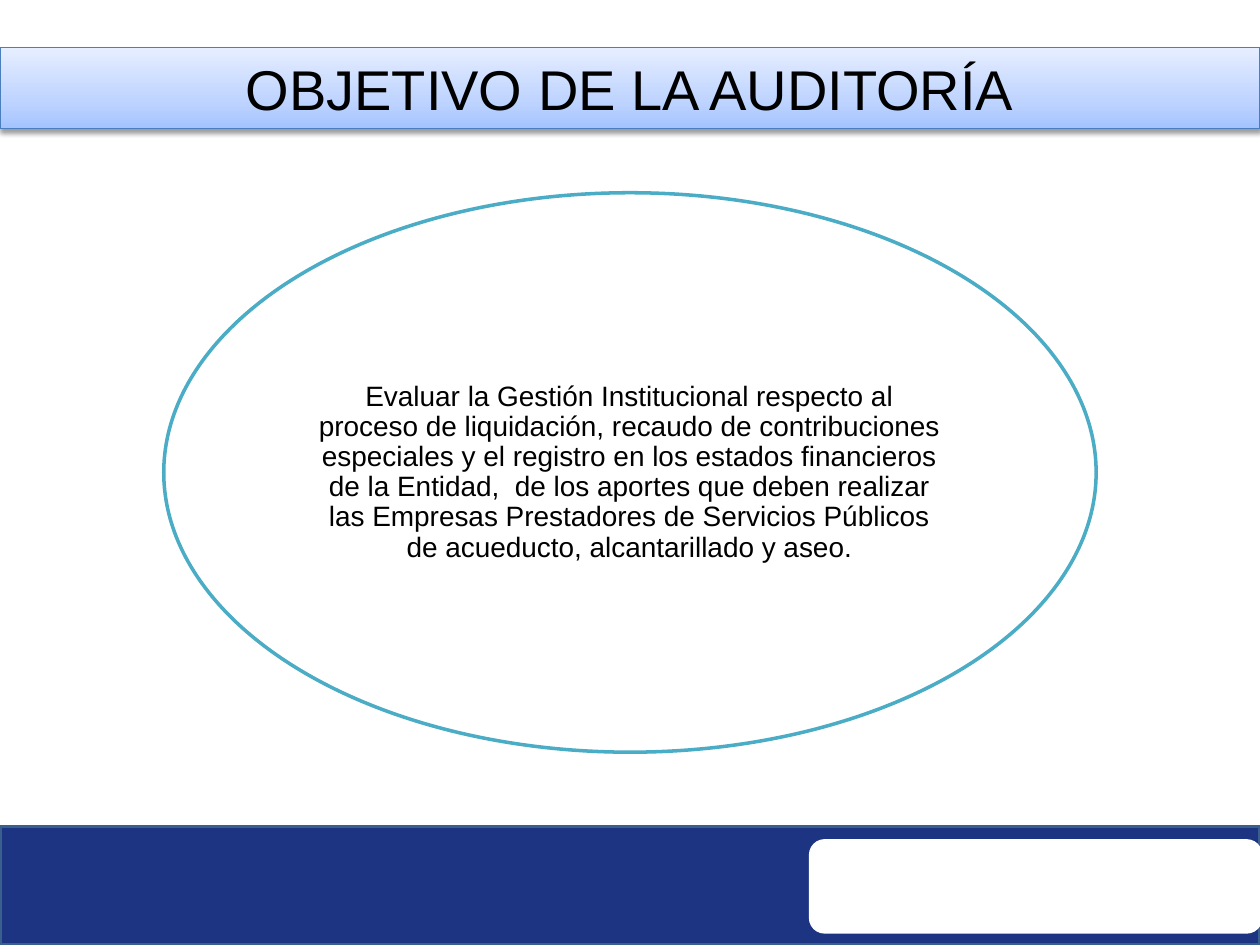
"""Build the audit objective slide."""
from copy import deepcopy
from dataclasses import dataclass
from typing import Optional

from lxml import etree
from pptx import Presentation
from pptx.dml.color import RGBColor
from pptx.enum.shapes import MSO_SHAPE as Preset
from pptx.enum.text import MSO_ANCHOR as Anchor, PP_ALIGN as Align
from pptx.oxml.ns import qn
from pptx.util import Inches, Pt

TITLE = "OBJETIVO DE LA AUDITORÍA"
OBJECTIVE = (
    "Evaluar la Gestión Institucional respecto al proceso de liquidación, "
    "recaudo de contribuciones especiales y el registro en los estados "
    "financieros de la Entidad,  de los aportes que deben realizar las Empresas "
    "Prestadores de Servicios Públicos de acueducto, alcantarillado y aseo."
)
BANNER_STOPS = ((0, "A4C4FF"), (0.35, "BFD4FF"), (1, "E6EEFF"))


@dataclass
class Panel:
    preset: Preset
    at: tuple
    fill: str
    line: Optional[str] = None
    width: float = 0


FOOTER = Panel(Preset.RECTANGLE, (0, 6.56, 10, 0.94), "1C3481", "3A5F8C", 2)
FOOTER_PLATE = Panel(Preset.ROUNDED_RECTANGLE, (6.42, 6.66, 3.6, 0.75), "FFFFFF")
BANNER = Panel(Preset.RECTANGLE, (0, 0.38, 10, 0.64), "BFD4FF", "4B7EBC", 0.75)
OVAL = Panel(Preset.OVAL, (1.3, 1.53, 7.4, 4.44), "FFFFFF", "4BACC6", 2)


def colour(value: str) -> RGBColor:
    return RGBColor.from_string(value)


def draw_panel(page, panel: Panel):
    shape = page.shapes.add_shape(panel.preset, *map(Inches, panel.at))
    shape.shadow.inherit = False
    shape.fill.solid()
    shape.fill.fore_color.rgb = colour(panel.fill)
    if panel.line:
        shape.line.color.rgb = colour(panel.line)
        shape.line.width = Pt(panel.width)
    else:
        shape.line.fill.background()
    return shape


def add_gradient(shape, stops: tuple, angle: float) -> None:
    shape.fill.gradient()
    shape.fill.gradient_angle = angle
    stop_list = next(shape.element.spPr.iter(qn("a:gsLst")))
    while len(stop_list) < len(stops):
        stop_list.append(deepcopy(stop_list[0]))
    for stop, (position, value) in zip(shape.fill.gradient_stops, stops):
        stop.position = position
        stop.color.rgb = colour(value)


def add_shadow(shape, value: str, opacity: int, blur: float, distance: float) -> None:
    effects = shape.element.spPr.find(qn("a:effectLst"))
    shadow = etree.SubElement(
        effects, qn("a:outerShdw"), blurRad=str(Pt(blur)), dist=str(Pt(distance)),
        dir="5400000", rotWithShape="0",
    )
    tint = etree.SubElement(shadow, qn("a:srgbClr"), val=value)
    etree.SubElement(tint, qn("a:alpha"), val=str(opacity * 1000))


def write_text(box, text: str, size: float, spacing: float, frame_format: dict) -> None:
    frame = box.text_frame
    for name, value in frame_format.items():
        setattr(frame, name, value)
    para = frame.paragraphs[0]
    para.alignment = Align.CENTER
    para.line_spacing = spacing
    span = para.add_run()
    span.text = text
    for name, value in {"name": "Arial", "size": Pt(size)}.items():
        setattr(span.font, name, value)
    span.font.color.rgb = colour("000000")


def main() -> None:
    deck = Presentation()
    deck.slide_width, deck.slide_height = Inches(10), Inches(7.5)
    page = deck.slides.add_slide(deck.slide_layouts[6])

    draw_panel(page, FOOTER)
    draw_panel(page, FOOTER_PLATE)

    banner = draw_panel(page, BANNER)
    add_gradient(banner, BANNER_STOPS, 90)
    add_shadow(banner, "000000", 38, 3.1, 1.6)
    write_text(banner, TITLE, 32, 1.0, {"word_wrap": True, "vertical_anchor": Anchor.TOP})

    draw_panel(page, OVAL)
    box = page.shapes.add_textbox(*map(Inches, (2.38, 2.64, 5.23, 2.22)))
    sides = ("left", "top", "right", "bottom")
    margins = {f"margin_{side}": Inches(0.12) for side in sides}
    objective_format = {"word_wrap": True, "vertical_anchor": Anchor.MIDDLE, **margins}
    write_text(box, OBJECTIVE, 16, 0.9, objective_format)

    deck.save("out.pptx")


if __name__ == "__main__":
    main()
